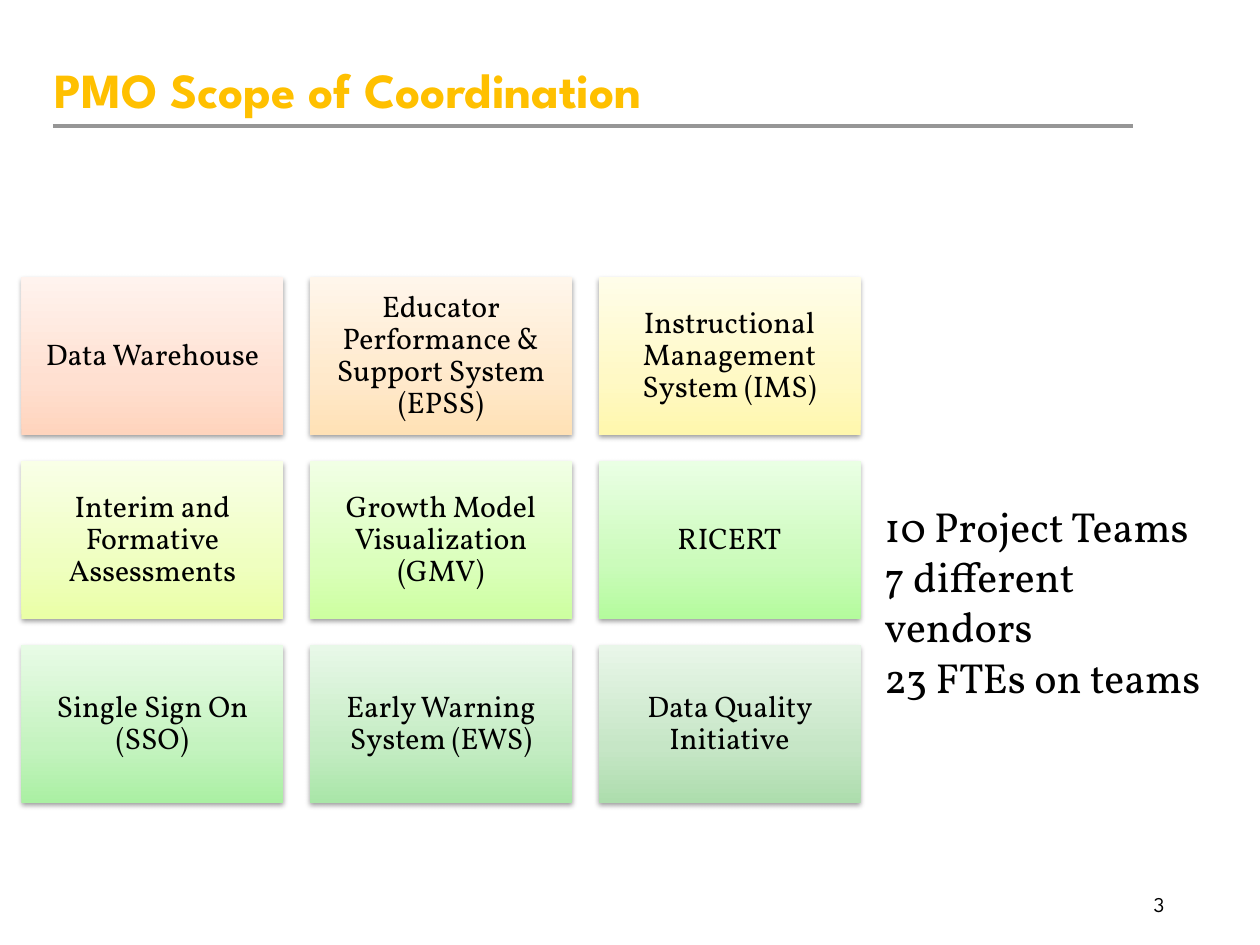
from lxml import etree
from pptx import Presentation
from pptx import util as u
from pptx.dml.color import RGBColor
from pptx.enum import shapes, text
from pptx.oxml import parse_xml
from pptx.oxml.ns import nsdecls, qn

W, H = 10, 7.5
COLS = 3
LEFT, TOP = 0.17, 2.2
CELL_W, CELL_H = 2.08, 1.25
STEP_X, STEP_Y = 2.29, 1.46
HEAD, BODY = "League Spartan", "Vollkorn"
COLORS = {"title": "FFC000", "text": "000000", "rule": "969696"}
PROJECTS = [
    ("Data Warehouse", ("FFD4BD", "FFE0D1", "FFF3EE")),
    ("Educator Performance & Support System (EPSS)", ("FFE1B5", "FFE9CB", "FFF6EB")),
    ("Instructional Management System (IMS)", ("FFF7AD", "FFF9C5", "FFFDE9")),
    ("Interim and Formative Assessments", ("EAFFA6", "EFFFC0", "F9FFE7")),
    ("Growth Model Visualization (GMV)", ("CDFFA0", "DBFFBC", "F1FFE5")),
    ("RICERT", ("B4FB9D", "CBFBBB", "EAFFE4")),
    ("Single Sign On (SSO)", ("AAF0A3", "C4F3BF", "E8FBE6")),
    ("Early Warning System (EWS)", ("A9E6A8", "C4ECC3", "E8F8E8")),
    ("Data Quality Initiative", ("ADDDAD", "C6E6C6", "E9F6E9")),
]
FACTS = ["10 Project Teams", "7 different vendors", "23 FTEs on teams"]


def add_run(p, words, size, font, color="text", bold=False):
    r = p.add_run()
    r.text = words
    r.font.size = u.Pt(size)
    r.font.name = font
    r.font.bold = bold
    r.font.color.rgb = RGBColor.from_string(COLORS[color])


def add_title(s, words):
    sp = s.shapes.title
    sp.left, sp.top = u.Inches(0.33), u.Inches(0.42)
    sp.width, sp.height = u.Inches(8.33), u.Inches(0.8)
    tf = sp.text_frame
    tf.vertical_anchor = text.MSO_ANCHOR.TOP
    p = tf.paragraphs[0]
    p.alignment = text.PP_ALIGN.LEFT
    add_run(p, words, 28, HEAD, "title", True)


def add_rule(s, x1, x2, y):
    ln = s.shapes.add_connector(shapes.MSO_CONNECTOR.STRAIGHT, *map(u.Inches, (x1, y, x2, y)))
    ln.line.color.rgb = RGBColor.from_string(COLORS["rule"])
    ln.line.width = u.Pt(2)
    etree.SubElement(ln._element.spPr, qn("a:effectLst"))


def add_text(s, box, lines, size, font, align=text.PP_ALIGN.LEFT):
    tf = s.shapes.add_textbox(*map(u.Inches, box)).text_frame
    tf.word_wrap = True
    for i, line in enumerate(lines):
        p = tf.add_paragraph() if i else tf.paragraphs[0]
        p.alignment = align
        add_run(p, line, size, font)


def style_card(sp, stops):
    sp.line.fill.background()
    gs = "".join(f'<a:gs pos="{pos}"><a:srgbClr val="{c}"/></a:gs>'
                 for pos, c in zip((0, 35000, 100000), stops))
    grad = parse_xml(f'<a:gradFill {nsdecls("a")} rotWithShape="1"><a:gsLst>{gs}</a:gsLst>'
                     '<a:lin ang="16200000" scaled="1"/></a:gradFill>')
    shadow = parse_xml(f'<a:effectLst {nsdecls("a")}><a:outerShdw blurRad="{u.Pt(3.1)}" '
                       f'dist="{u.Pt(1.6)}" dir="5400000" rotWithShape="0">'
                       '<a:srgbClr val="000000"><a:alpha val="38000"/></a:srgbClr>'
                       '</a:outerShdw></a:effectLst>')
    spPr = sp._element.spPr
    spPr.find(qn("a:prstGeom")).addnext(grad)
    spPr.append(shadow)


def add_card(s, i, words, stops):
    row, col = divmod(i, COLS)
    box = (LEFT + col * STEP_X, TOP + row * STEP_Y, CELL_W, CELL_H)
    sp = s.shapes.add_shape(shapes.MSO_SHAPE.RECTANGLE, *map(u.Inches, box))
    style_card(sp, stops)
    tf = sp.text_frame
    tf.word_wrap = True
    tf.vertical_anchor = text.MSO_ANCHOR.MIDDLE
    tf.margin_left = tf.margin_right = tf.margin_top = tf.margin_bottom = u.Inches(0.07)
    p = tf.paragraphs[0]
    p.alignment = text.PP_ALIGN.CENTER
    p.line_spacing = 0.9
    add_run(p, words, 17, BODY)


def main():
    prs = Presentation()
    prs.slide_width, prs.slide_height = u.Inches(W), u.Inches(H)
    s = prs.slides.add_slide(prs.slide_layouts[5])
    add_rule(s, 0.42, 8.99, 1)
    add_text(s, (8.67, 7.03, 0.67, 0.3), ["3"], 12, HEAD, text.PP_ALIGN.RIGHT)
    add_title(s, "PMO Scope of Coordination")
    for i, (words, stops) in enumerate(PROJECTS):
        add_card(s, i, words, stops)
    add_text(s, (6.92, 3.92, 2.81, 1.31), FACTS, 24, BODY)
    prs.save("out.pptx")


if __name__ == "__main__":
    main()
